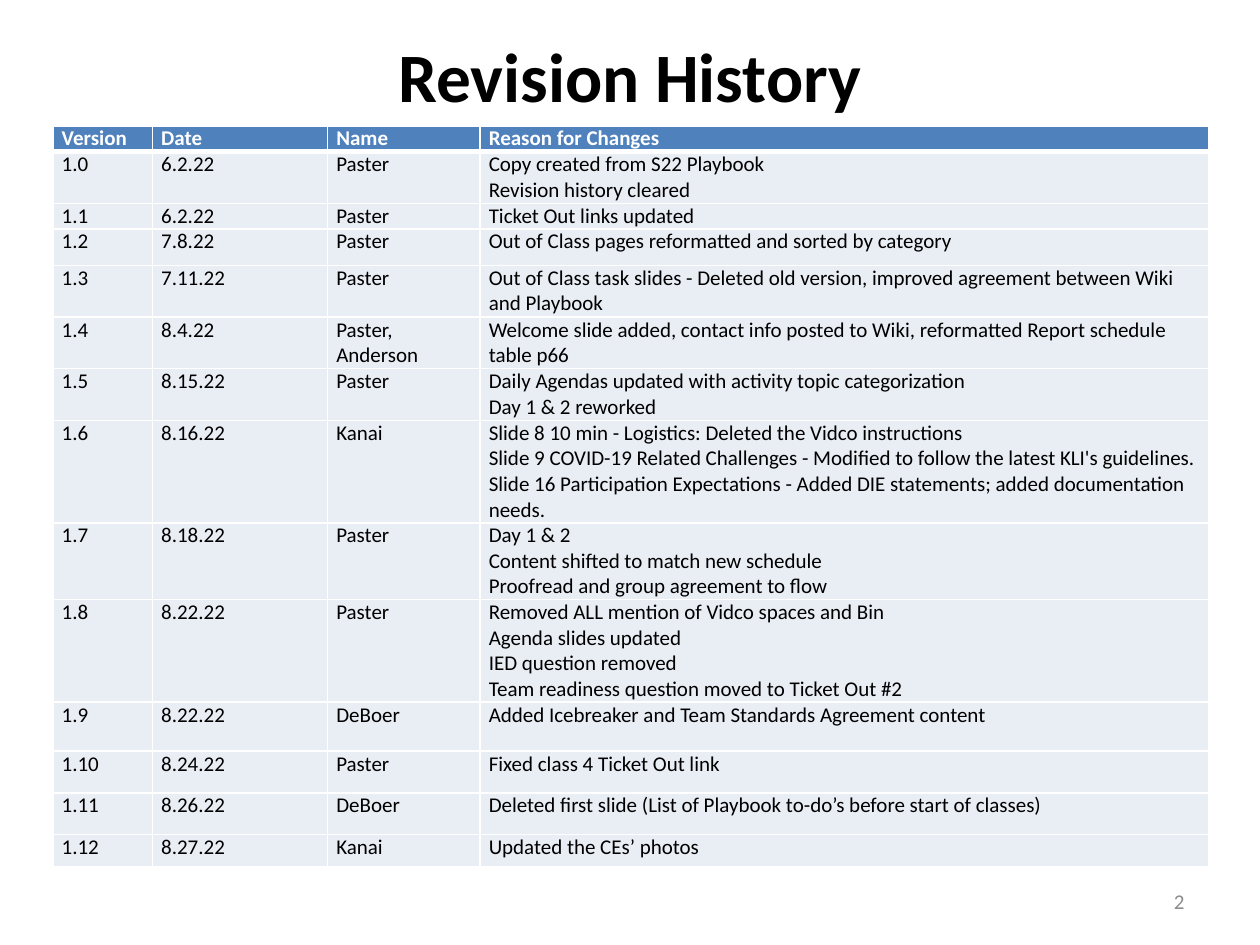
from pptx import Presentation, util as u
from pptx.dml.color import RGBColor
from pptx.enum import text
from pptx.oxml.ns import qn
from lxml import etree

BLACK = RGBColor(0x00, 0x00, 0x00)
WHITE = RGBColor(0xFF, 0xFF, 0xFF)
BLUE = RGBColor(0x4F, 0x81, 0xBD)
PALE = RGBColor(0xE9, 0xED, 0xF4)
GREY = RGBColor(0x8C, 0x8C, 0x8C)
FONT = "Calibri"

COLUMNS = [0.79, 1.39, 1.21, 5.78]
# Row height in inches, then version, date, name and reason
ROWS = [
    (0.2, "Version", "Date", "Name", "Reason for Changes"),
    (0.41, "1.0", "6.2.22", "Paster",
     "Copy created from S22 Playbook\nRevision history cleared"),
    (0.2, "1.1", "6.2.22", "Paster", "Ticket Out links updated"),
    (0.29, "1.2", "7.8.22", "Paster",
     "Out of Class pages reformatted and sorted by category"),
    (0.41, "1.3", "7.11.22", "Paster",
     "Out of Class task slides - Deleted old version, improved agreement "
     "between Wiki and Playbook"),
    (0.41, "1.4", "8.4.22", "Paster, Anderson",
     "Welcome slide added, contact info posted to Wiki, reformatted Report "
     "schedule table p66"),
    (0.41, "1.5", "8.15.22", "Paster",
     "Daily Agendas updated with activity topic categorization\n"
     "Day 1 & 2 reworked"),
    (0.81, "1.6", "8.16.22", "Kanai",
     "Slide 8 10 min - Logistics: Deleted the Vidco instructions\n"
     "Slide 9 COVID-19 Related Challenges - Modified to follow the latest "
     "KLI's guidelines.\n"
     "Slide 16 Participation Expectations - Added DIE statements; added "
     "documentation needs."),
    (0.61, "1.7", "8.18.22", "Paster",
     "Day 1 & 2\nContent shifted to match new schedule\n"
     "Proofread and group agreement to flow"),
    (0.81, "1.8", "8.22.22", "Paster",
     "Removed ALL mention of Vidco spaces and Bin\nAgenda slides updated\n"
     "IED question removed\nTeam readiness question moved to Ticket Out #2"),
    (0.39, "1.9", "8.22.22", "DeBoer",
     "Added Icebreaker and Team Standards Agreement content"),
    (0.33, "1.10", "8.24.22", "Paster", "Fixed class 4 Ticket Out link"),
    (0.33, "1.11", "8.26.22", "DeBoer",
     "Deleted first slide (List of Playbook to-do’s before start of classes)"),
    (0.26, "1.12", "8.27.22", "Kanai", "Updated the CEs’ photos"),
]


def format_text(tf, size, color, bold=False, align=text.PP_ALIGN.LEFT):
    for p in tf.paragraphs:
        p.alignment = align
        for r in p.runs:
            r.font.name, r.font.size = FONT, u.Pt(size)
            r.font.bold, r.font.color.rgb = bold, color


def set_border(cell, side, width):
    ln = etree.SubElement(cell._tc.get_or_add_tcPr(), qn("a:ln" + side),
                          w=str(u.Pt(width)))
    fill = etree.SubElement(ln, qn("a:solidFill"))
    etree.SubElement(fill, qn("a:srgbClr"), val=str(WHITE))


prs = Presentation()
prs.slide_width, prs.slide_height = u.Inches(10), u.Inches(7.5)
s = prs.slides.add_slide(prs.slide_layouts[5])

# Title, kept in the upper part of its box by the bottom margin
sp = s.shapes.title
sp.left, sp.top, sp.width, sp.height = map(u.Inches, (0.5, 0.3, 9, 1.25))
tf = sp.text_frame
tf.text = "Revision History"
tf.vertical_anchor = text.MSO_ANCHOR.MIDDLE
tf.margin_top, tf.margin_bottom = 0, u.Inches(0.67)
format_text(tf, 39.6, BLACK, True, text.PP_ALIGN.CENTER)

# Revision table
height = sum(row[0] for row in ROWS)
table = s.shapes.add_table(
    len(ROWS), len(COLUMNS), u.Inches(0.42), u.Inches(1),
    u.Inches(sum(COLUMNS)), u.Inches(height)).table
for column, width in zip(table.columns, COLUMNS):
    column.width = u.Inches(width)
for i, (row_height, *values) in enumerate(ROWS):
    table.rows[i].height = u.Inches(row_height)
    header = i == 0
    for j, value in enumerate(values):
        cell = table.cell(i, j)
        cell.margin_left = cell.margin_right = u.Inches(0.07)
        cell.margin_top = cell.margin_bottom = 0
        cell.text_frame.text = value
        format_text(cell.text_frame, 12, WHITE if header else BLACK, header)
        # Borders go before the fill in the cell properties
        for side in "LRTB":
            thick = (i, side) in ((0, "B"), (1, "T"))
            set_border(cell, side, 3 if thick else 1)
        cell.fill.solid()
        cell.fill.fore_color.rgb = BLUE if header else PALE

# Page number
sp = s.shapes.add_textbox(*map(u.Inches, (7.17, 6.95, 2.33, 0.4)))
tf = sp.text_frame
tf.word_wrap = True
tf.vertical_anchor = text.MSO_ANCHOR.MIDDLE
tf.text = "2"
format_text(tf, 12, GREY, align=text.PP_ALIGN.RIGHT)

prs.save("out.pptx")
